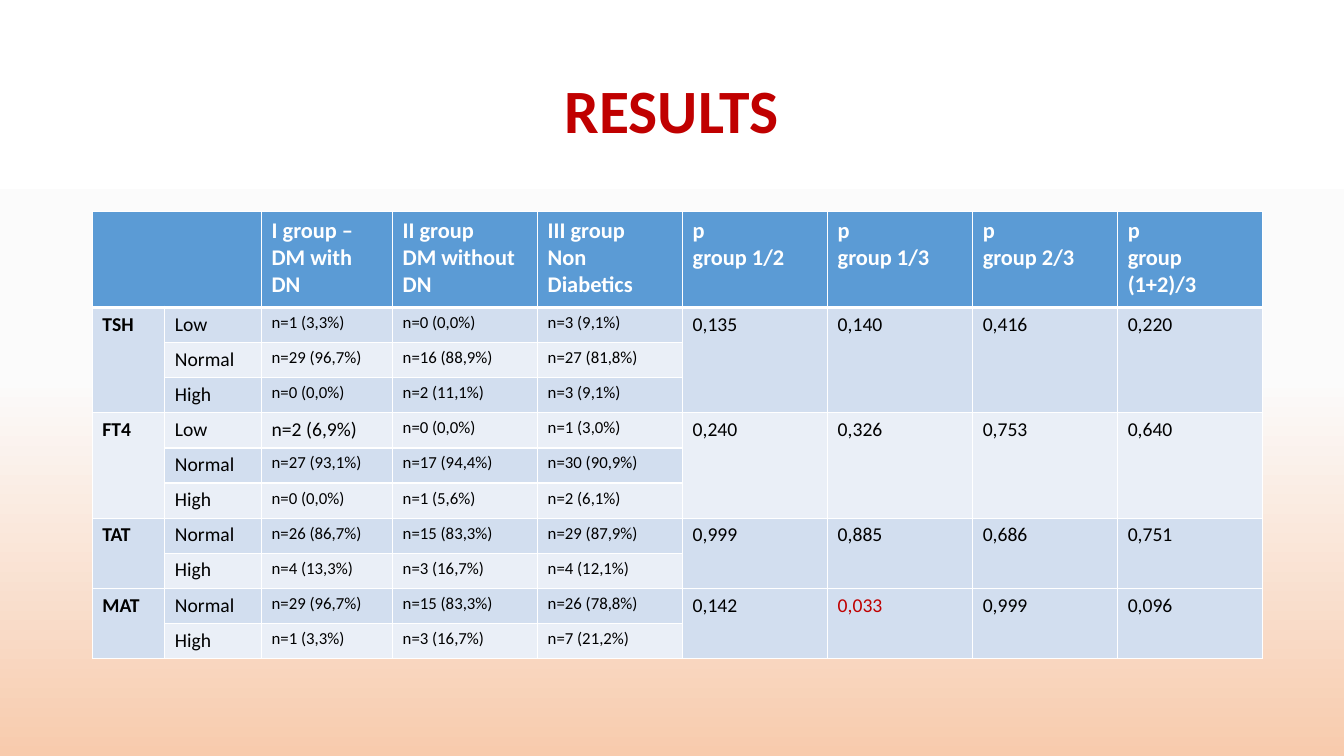
"""Build the thyroid results slide."""
from copy import deepcopy
from dataclasses import dataclass

from lxml.etree import SubElement
from pptx import Presentation
from pptx.dml.color import RGBColor as RGB
from pptx.enum.text import MSO_ANCHOR as Anchor, PP_ALIGN as Align
from pptx.oxml.ns import qn
from pptx.util import Pt


@dataclass(frozen=True)
class Theme:
    """Colours, font and type sizes of the slide."""
    font: str = "Calibri"
    accent: str = "C00000"
    header: str = "5B9BD5"
    bands: tuple[str, str] = ("EAEFF7", "D2DEEF")
    white: str = "FFFFFF"
    black: str = "000000"
    background: tuple[str, ...] = ("FFFFFF", "FBFBFB", "F8CBAD")
    title_pt: int = 44
    header_pt: int = 16
    label_pt: int = 14
    count_pt: int = 12


@dataclass(frozen=True)
class Marker:
    """One thyroid marker: a row of counts per level and its p values."""
    name: str
    levels: dict[str, tuple[str, str, str]]
    p_values: tuple[str, str, str, str]


@dataclass(frozen=True)
class Style:
    """Look of the text in one cell."""
    size: int
    color: str
    bold: bool = False


THEME = Theme()
HEADERS = ("", "", "I group –\nDM with DN", "II group\nDM without DN",
           "III group\nNon Diabetics", "p\ngroup 1/2", "p\ngroup 1/3",
           "p\ngroup 2/3", "p\ngroup\n(1+2)/3")
MARKERS = (
    Marker("TSH", {"Low": ("1 (3,3%)", "0 (0,0%)", "3 (9,1%)"),
                   "Normal": ("29 (96,7%)", "16 (88,9%)", "27 (81,8%)"),
                   "High": ("0 (0,0%)", "2 (11,1%)", "3 (9,1%)")},
           ("0,135", "0,140", "0,416", "0,220")),
    Marker("FT4", {"Low": ("2 (6,9%)", "0 (0,0%)", "1 (3,0%)"),
                   "Normal": ("27 (93,1%)", "17 (94,4%)", "30 (90,9%)"),
                   "High": ("0 (0,0%)", "1 (5,6%)", "2 (6,1%)")},
           ("0,240", "0,326", "0,753", "0,640")),
    Marker("TAT", {"Normal": ("26 (86,7%)", "15 (83,3%)", "29 (87,9%)"),
                   "High": ("4 (13,3%)", "3 (16,7%)", "4 (12,1%)")},
           ("0,999", "0,885", "0,686", "0,751")),
    Marker("MAT", {"Normal": ("29 (96,7%)", "15 (83,3%)", "26 (78,8%)"),
                   "High": ("1 (3,3%)", "3 (16,7%)", "7 (21,2%)")},
           ("0,142", "0,033", "0,999", "0,096")),
)
SIGNIFICANT = "0,033"
LARGE_COUNT = "2 (6,9%)"
COLUMN_WIDTHS = (51.8, 69.1, 93.6) + (103.6,) * 6
HEADER_HEIGHT, ROW_HEIGHT = 68.4, 25.1
FIRST_COUNT, FIRST_P = 2, 5


def format_text(tf, style: Style) -> None:
    """Give every run of a text frame the same look."""
    for p in tf.paragraphs:
        for r in p.runs:
            r.font.name = THEME.font
            r.font.size = Pt(style.size)
            r.font.bold = style.bold
            r.font.color.rgb = RGB.from_string(style.color)


def set_background(s) -> None:
    """Fill the slide with the vertical three-stop gradient."""
    fill = s.background.fill
    fill.gradient()
    fill.gradient_angle = 270
    stops = s.element.xpath(".//a:gsLst")[0]
    stops.append(deepcopy(stops[-1]))
    for i, (stop, color) in enumerate(zip(fill.gradient_stops, THEME.background)):
        stop.position = i / 2
        stop.color.rgb = RGB.from_string(color)


def add_title(s) -> None:
    """Place and format the title."""
    sp = s.shapes.title
    sp.left, sp.top, sp.width, sp.height = Pt(66), Pt(28.8), Pt(828), Pt(104.4)
    tf = sp.text_frame
    tf.text = "RESULTS"
    tf.vertical_anchor = Anchor.MIDDLE
    p = tf.paragraphs[0]
    p.alignment, p.line_spacing = Align.CENTER, 0.9
    format_text(tf, Style(THEME.title_pt, THEME.accent, True))


def frame_cell(cell, fill: str, top: int, bottom: int) -> None:
    """Give a cell its white borders and its fill."""
    props = cell._tc.get_or_add_tcPr()
    for side, width in (("L", 1), ("R", 1), ("T", top), ("B", bottom)):
        line = SubElement(props, qn(f"a:ln{side}"), w=str(Pt(width)))
        solid = SubElement(line, qn("a:solidFill"))
        SubElement(solid, qn("a:srgbClr"), val=THEME.white)
    cell.fill.solid()
    cell.fill.fore_color.rgb = RGB.from_string(fill)


def write_cell(cell, text: str, style: Style) -> None:
    """Write and format the text of a cell."""
    cell.text_frame.text = text
    format_text(cell.text_frame, style)


def fill_marker(table, marker: Marker, first: int) -> int:
    """Write the rows of one marker and return the next free row."""
    label = Style(THEME.label_pt, THEME.black)
    last = first + len(marker.levels) - 1
    write_cell(table.cell(first, 0), marker.name,
               Style(THEME.label_pt, THEME.black, True))
    for row, (level, counts) in enumerate(marker.levels.items(), first):
        write_cell(table.cell(row, 1), level, label)
        for col, count in enumerate(counts, FIRST_COUNT):
            size = THEME.label_pt if count == LARGE_COUNT else THEME.count_pt
            write_cell(table.cell(row, col), f"n={count}", Style(size, THEME.black))
    for col, value in enumerate(marker.p_values, FIRST_P):
        color = THEME.accent if value == SIGNIFICANT else THEME.black
        write_cell(table.cell(first, col), value, Style(THEME.label_pt, color))
    for col in (0, *range(FIRST_P, len(HEADERS))):
        table.cell(first, col).merge(table.cell(last, col))
    return last + 1


def add_results(s) -> None:
    """Add the table of counts and p values."""
    heights = (HEADER_HEIGHT,) + (ROW_HEIGHT,) * sum(len(m.levels) for m in MARKERS)
    table = s.shapes.add_table(len(heights), len(HEADERS), Pt(66), Pt(151.2),
                               Pt(sum(COLUMN_WIDTHS)), Pt(sum(heights))).table
    for column, width in zip(table.columns, COLUMN_WIDTHS):
        column.width = Pt(width)
    for i, (row, height) in enumerate(zip(table.rows, heights)):
        row.height = Pt(height)
        fill = THEME.bands[i % 2] if i else THEME.header
        for cell in row.cells:
            frame_cell(cell, fill, 3 if i == 1 else 1, 1 if i else 3)
    for col, text in enumerate(HEADERS):
        write_cell(table.cell(0, col), text, Style(THEME.header_pt, THEME.white, True))
    table.cell(0, 0).merge(table.cell(0, 1))
    row = 1
    for marker in MARKERS:
        row = fill_marker(table, marker, row)


def main() -> None:
    """Build and save the presentation."""
    prs = Presentation()
    prs.slide_width, prs.slide_height = Pt(960), Pt(540)
    s = prs.slides.add_slide(prs.slide_layouts[5])
    set_background(s)
    add_title(s)
    add_results(s)
    prs.save("out.pptx")


if __name__ == "__main__":
    main()
